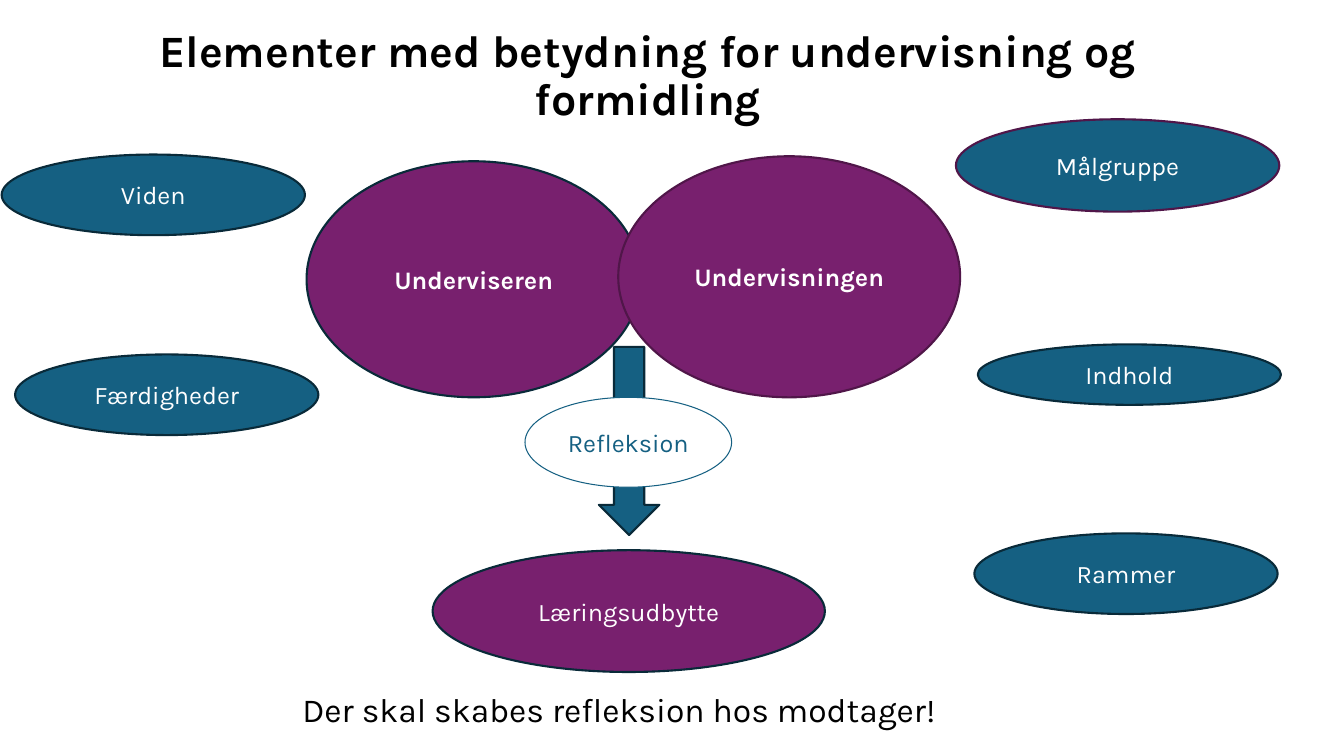
"""Build a slide on the elements that shape teaching and communication."""
from dataclasses import dataclass

from pptx import Presentation, util as u
from pptx.dml.color import RGBColor
from pptx.enum import shapes, text

COLUMNS, ROWS = 160, 90
CELL = u.Inches(1 / 12)


@dataclass(frozen=True)
class Theme:
    """Hold the colours, font and type sizes."""
    font: str = "Karla"
    blue: str = "156082"
    purple: str = "78206E"
    navy: str = "092A39"
    plum: str = "501649"
    white: str = "FFFFFF"
    black: str = "000000"
    title: int = 32
    caption: int = 24
    label: int = 18


THEME = Theme()


def place(cells):
    """Turn grid cells into slide lengths."""
    return [u.Emu(round(cell * CELL)) for cell in cells]


def apply(target, values):
    """Set each named attribute on the target."""
    for name, value in values.items():
        setattr(target, name, value)


def write(shape, wording, size, color, bold=False, spacing=1.0,
          anchor=text.MSO_ANCHOR.MIDDLE):
    """Put one centred paragraph into a shape."""
    frame = shape.text_frame
    apply(frame, {"word_wrap": True, "vertical_anchor": anchor})
    para = frame.paragraphs[0]
    apply(para, {"alignment": text.PP_ALIGN.CENTER, "line_spacing": spacing})
    span = para.add_run()
    span.text = wording
    apply(span.font, {"name": THEME.font, "size": u.Pt(size), "bold": bold})
    span.font.color.rgb = RGBColor.from_string(color)


def add_text(page, cells, wording, size, **style):
    """Add a black text box."""
    box = page.shapes.add_textbox(*place(cells))
    write(box, wording, size, THEME.black, **style)


def add_figure(page, kind, cells, fill, line, weight=1.5):
    """Add a flat preset shape with an outline."""
    figure = page.shapes.add_shape(kind, *place(cells))
    figure.shadow.inherit = False
    figure.fill.solid()
    figure.fill.fore_color.rgb = RGBColor.from_string(fill)
    figure.line.color.rgb = RGBColor.from_string(line)
    figure.line.width = u.Pt(weight)
    return figure


def add_oval(page, wording, cells, fill=THEME.blue, line=THEME.navy,
             color=THEME.white, weight=1.5, bold=False):
    """Add a labelled oval."""
    oval = add_figure(page, shapes.MSO_SHAPE.OVAL, cells, fill, line, weight)
    write(oval, wording, THEME.label, color, bold)


def main():
    """Build and save the slide."""
    deck = Presentation()
    apply(deck, {"slide_width": COLUMNS * CELL, "slide_height": ROWS * CELL})
    page = deck.slides.add_slide(deck.slide_layouts[6])

    add_text(page, (4.9, 4.1, 144.5, 10.1),
             "Elementer med betydning for undervisning og formidling",
             THEME.title, bold=True, spacing=0.9)
    add_oval(page, "Målgruppe", (113.8, 14.2, 38.5, 11), line=THEME.plum)
    for wording, left, top, height in (
            ("Rammer", 116, 63.5, 9.6),
            ("Viden", 0.2, 18.4, 9.6),
            ("Færdigheder", 1.8, 42.2, 9.6),
            ("Indhold", 116.4, 41, 7.2)):
        add_oval(page, wording, (left, top, 36.1, height))

    add_oval(page, "Læringsudbytte", (51.5, 65.5, 46.7, 14.5), THEME.purple)
    add_oval(page, "Underviseren", (36.5, 19.2, 39.8, 28.1), THEME.purple,
             bold=True)
    add_figure(page, shapes.MSO_SHAPE.DOWN_ARROW, (71.3, 41.3, 7.2, 22.4),
               THEME.blue, THEME.navy)
    add_oval(page, "Undervisningen", (73.6, 18.6, 40.7, 28.7), THEME.purple,
             THEME.plum, bold=True)
    add_text(page, (31, 81.4, 85.4, 6),
             "Der skal skabes refleksion hos modtager!", THEME.caption,
             anchor=text.MSO_ANCHOR.TOP)
    add_oval(page, "Refleksion", (62.5, 47.3, 24.6, 10.7), THEME.white,
             THEME.blue, THEME.blue, weight=0.75)
    deck.save("out.pptx")


if __name__ == "__main__":
    main()
